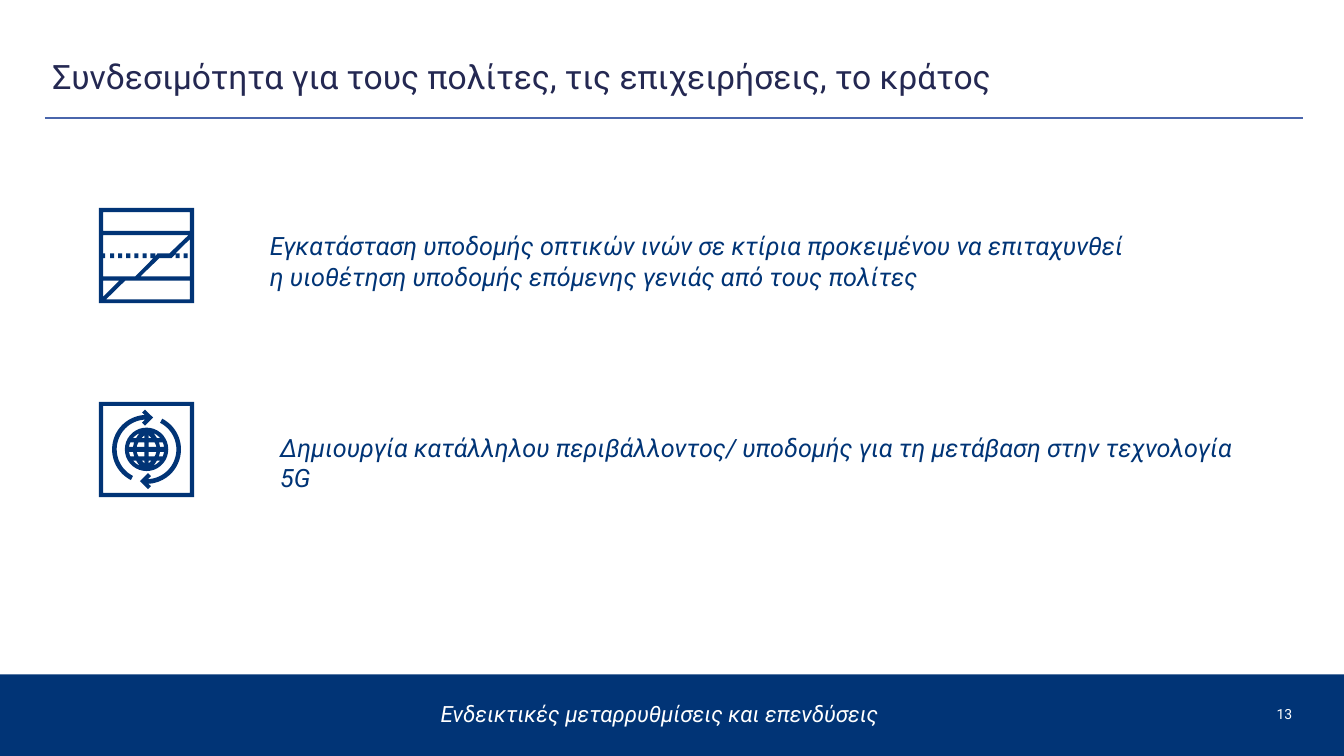
import math
from dataclasses import dataclass

import pptx
import pptx.chart.data
import pptx.dml.color
import pptx.enum.shapes
import pptx.enum.text
import pptx.util
from lxml import etree
from pptx.util import Pt


@dataclass(frozen=True)
class Theme:
    font: str = "Roboto"
    navy: str = "013476"
    body: str = "003476"
    title: str = "242852"
    rule: str = "4A66AC"
    white: str = "FFFFFF"
    head: int = 24
    text: int = 18
    foot: int = 16
    page: int = 10


THEME = Theme()
WIDE, HIGH = 960, 540
PAD = 7.2
ALIGN = pptx.enum.text.PP_ALIGN
ANCHOR = pptx.enum.text.MSO_ANCHOR

# text, (left, top, width, height), size, colour, italic, align, anchor, top inset
TEXTS = [
    ("Συνδεσιμότητα για τους πολίτες, τις επιχειρήσεις, το κράτος",
     (30.24, 36, 929.5, 60.5), THEME.head, THEME.title, False, ALIGN.LEFT, ANCHOR.TOP, PAD),
    ("13", (889.2, 489.6, 41, 41), THEME.page, THEME.white, False,
     ALIGN.RIGHT, ANCHOR.MIDDLE, PAD),
    ("Εγκατάσταση υποδομής οπτικών ινών σε κτίρια προκειμένου να επιταχυνθεί "
     "η υιοθέτηση υποδομής επόμενης γενιάς από τους πολίτες",
     (185.76, 161.3, 629.3, 51), THEME.text, THEME.body, True, ALIGN.LEFT, ANCHOR.TOP, PAD / 2),
    ("Δημιουργία κατάλληλου περιβάλλοντος/ υποδομής για τη μετάβαση στην τεχνολογία 5G",
     (193, 305.3, 697, 51), THEME.text, THEME.body, True, ALIGN.LEFT, ANCHOR.TOP, PAD / 2),
    ("Ενδεικτικές μεταρρυθμίσεις και επενδύσεις",
     (284.4, 496.8, 373.7, 26.6), THEME.foot, THEME.white, True,
     ALIGN.CENTER, ANCHOR.TOP, PAD / 2),
]

SIDE, EDGE = 68, 3
FIBRE = (70.7, 148.5)
FRAME = (70.7, 287)
GLOBE = (104.7, 321)

# Openings in the fibre icon, from its top left corner
HOLES = [
    [(65, 49), (29.5, 49), (43.2, 35.8), (51.8, 35.8), (54.7, 33), (54.7, 35.8),
     (57.6, 35.8), (57.6, 32.4), (54.7, 32.4), (65, 22.3)],
    [(3, 52), (14.4, 52), (3, 63.4)],
    [(3, 49), (3, 35.8), (4.5, 35.8), (4.5, 32.4), (3, 32.4), (3, 19.4), (64, 19.4),
     (50.4, 32.4), (41.8, 32.4), (40.3, 34.6), (40.3, 32.4), (36.7, 32.4),
     (36.7, 35.8), (38.9, 35.8), (25.9, 49)],
    [(5, 65.4), (18.7, 52), (65, 52), (65, 65.4)],
]
DASHES = [7.9 + 5.8 * i for i in range(5)] + [60.5]
ROWS = [(1.8, 5), (8, 11.2)]
TIP = [(-1.1, -24.6), (-3.2, -26.3), (-1.1, -28.4), (4.7, -22.7), (-1.1, -17), (-3.2, -19.1)]


def color(code):
    return pptx.dml.color.RGBColor.from_string(code)


def block(x, y, wide, high):
    return [(x, y), (x + wide, y), (x + wide, y + high), (x, y + high)]


def arc(radius, start, end, steps=36):
    turns = [math.radians(start + (end - start) * i / steps) for i in range(steps + 1)]
    return [(radius * math.cos(t), radius * math.sin(t)) for t in turns]


def outline(shapes, origin, loops):
    """Draw closed loops as one shape; loops inside others become holes."""
    spots = [[(Pt(origin[0] + x), Pt(origin[1] + y)) for x, y in loop] for loop in loops]
    pen = shapes.build_freeform(*spots[0][0])
    for i, loop in enumerate(spots):
        if i:
            pen.move_to(*loop[0])
        pen.add_line_segments(loop[1:], close=True)
    paint(pen.convert_to_shape())


def paint(shape):
    shape.shadow.inherit = False
    shape.fill.solid()
    shape.fill.fore_color.rgb = color(THEME.navy)
    shape.line.fill.background()


def cells():
    """Openings between the meridians and parallels of the globe."""
    inner = lambda y: max(1.5, 7.2 * (1 - (y / 11.2) ** 2))
    outer = lambda y: 9.7 * (1 - (y / 16.5) ** 2)
    rim = lambda y: math.sqrt(12.6 ** 2 - y ** 2)
    bands = [(lambda y: 1.5, inner), (outer, rim)]
    for near, far in ROWS:
        levels = [near + (far - near) * i / 4 for i in range(5)]
        for left, right in bands:
            loop = [(left(y), y) for y in levels] + [(right(y), y) for y in levels[::-1]]
            for across in (1, -1):
                for down in (1, -1):
                    yield [(across * x, down * y) for x, y in loop]


def write(slide, text, box, size, code, slant, align, anchor, inset):
    frame = slide.shapes.add_textbox(*map(Pt, box)).text_frame
    frame.word_wrap = True
    frame.vertical_anchor = anchor
    frame.margin_left = frame.margin_right = Pt(PAD)
    frame.margin_top = frame.margin_bottom = Pt(inset)
    frame.text = text
    line = frame.paragraphs[0]
    line.alignment = align
    if size == THEME.head:
        line.line_spacing = 0.9
    font = line.runs[0].font
    font.name, font.size, font.italic = THEME.font, Pt(size), slant
    font.color.rgb = color(code)


def main():
    deck = pptx.Presentation()
    deck.slide_width, deck.slide_height = Pt(WIDE), Pt(HIGH)
    slide = deck.slides.add_slide(deck.slide_layouts[6])
    shapes = slide.shapes

    top = 481.7
    paint(shapes.add_shape(pptx.enum.shapes.MSO_SHAPE.RECTANGLE,
                           0, Pt(top), Pt(WIDE), Pt(HIGH - top)))
    rule = shapes.add_connector(pptx.enum.shapes.MSO_CONNECTOR.STRAIGHT,
                                Pt(32), Pt(84.4), Pt(931), Pt(84.4))
    rule.line.color.rgb = color(THEME.rule)
    rule.line.width = Pt(1)
    etree.SubElement(rule.element.spPr, pptx.oxml.ns.qn("a:effectLst"))

    square = block(0, 0, SIDE, SIDE)
    roof = block(EDGE, EDGE, SIDE - 2 * EDGE, 13.4)
    dashes = [block(x, 32.4, 2.9, 3.4) for x in DASHES]
    outline(shapes, FIBRE, [square, roof] + HOLES + dashes)

    icon = shapes.add_group_shape().shapes
    outline(icon, FRAME, [square, block(EDGE, EDGE, SIDE - 2 * EDGE, SIDE - 2 * EDGE)])
    arrow = arc(24.6, 117, 267) + TIP[1:] + arc(21.3, 267, 117)
    for sign in (1, -1):
        outline(icon, GLOBE, [[(sign * x, sign * y) for x, y in arrow]])
    outline(icon, GLOBE, [arc(15.5, 0, 360)] + list(cells()))

    for item in TEXTS:
        write(slide, *item)
    deck.save("out.pptx")


if __name__ == "__main__":
    main()
